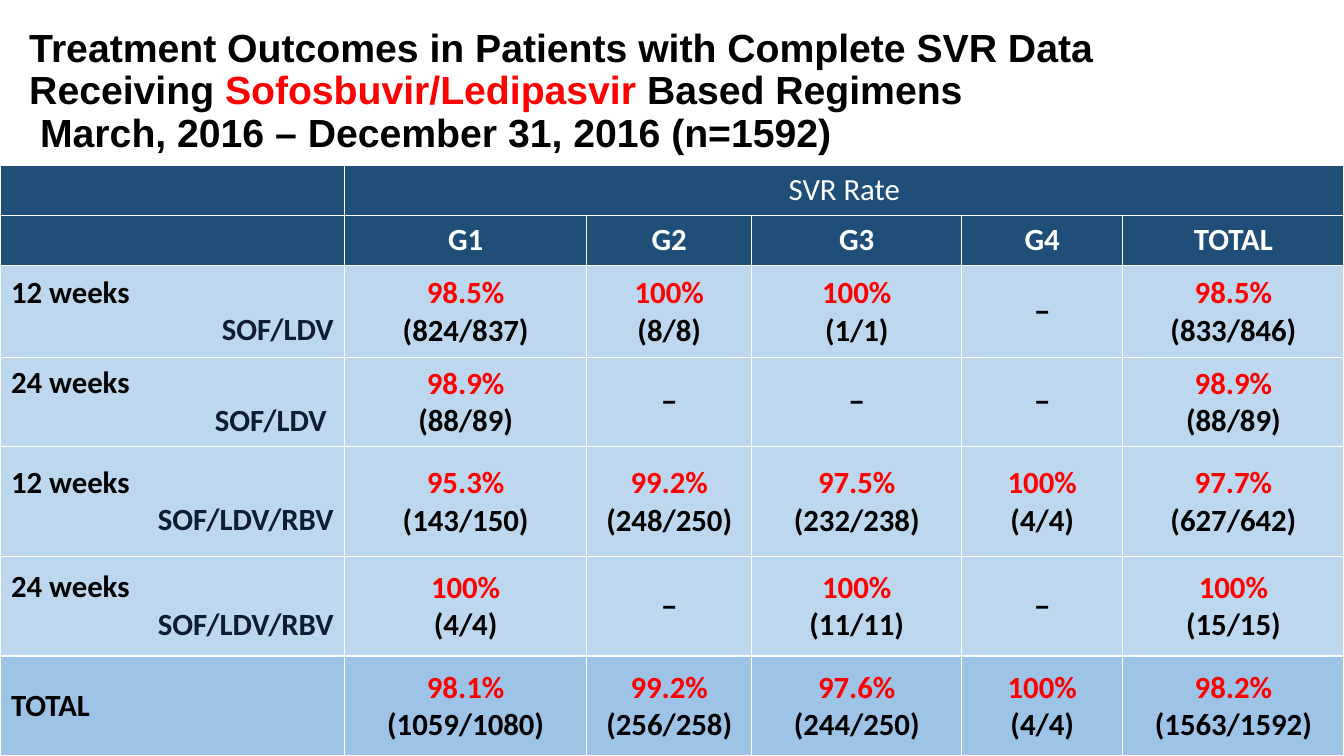
from dataclasses import dataclass

import lxml.etree
import pptx
import pptx.dml.color
import pptx.enum.text
import pptx.oxml.ns
import pptx.util

Pt = pptx.util.Pt
ALIGN = pptx.enum.text.PP_ALIGN
MIDDLE = pptx.enum.text.MSO_ANCHOR.MIDDLE


@dataclass(frozen=True)
class Theme:
    title_font: str = "Arial"
    table_font: str = "Calibri"
    title_size: float = 28
    table_size: float = 22
    border_width: float = 1
    black: str = "000000"
    white: str = "FFFFFF"
    accent: str = "FF0000"
    regimen: str = "101C32"
    header_fill: str = "1F4E79"
    body_fill: str = "BDD7EE"
    total_fill: str = "9DC3E6"


@dataclass(frozen=True)
class Line:
    """One paragraph of a table cell."""
    text: str
    color: str
    align: ALIGN = ALIGN.CENTER
    bold: bool = True


@dataclass(frozen=True)
class Outcome:
    """One treatment row: rates for G1 to G4 and the total."""
    duration: str
    regimen: str
    rates: tuple[str, ...]
    height: float
    fill: str


THEME = Theme()
LABEL_MARGINS = (7.9, 2.9, 7.9, 2.9)  # left, top, right, bottom
RATE_MARGINS = (0.7, 0.7, 0.7, 0)
COLUMN_WIDTHS = (246.2, 172.8, 118.1, 149.8, 115.2, 157.9)
HEADER_HEIGHT = 35.7
TABLE_TOP = 118.1
NO_DATA = "−"
GENOTYPES = ("G1", "G2", "G3", "G4", "TOTAL")

OUTCOMES = (
    Outcome("12 weeks", "SOF/LDV",
            ("98.5% (824/837)", "100% (8/8)", "100% (1/1)", NO_DATA, "98.5% (833/846)"),
            65.8, THEME.body_fill),
    Outcome("24 weeks", "SOF/LDV ",
            ("98.9% (88/89)", NO_DATA, NO_DATA, NO_DATA, "98.9% (88/89)"),
            63.6, THEME.body_fill),
    Outcome("12 weeks", "SOF/LDV/RBV",
            ("95.3% (143/150)", "99.2% (248/250)", "97.5% (232/238)", "100% (4/4)",
             "97.7% (627/642)"),
            78.5, THEME.body_fill),
    Outcome("24 weeks", "SOF/LDV/RBV",
            ("100% (4/4)", NO_DATA, "100% (11/11)", NO_DATA, "100% (15/15)"),
            71.3, THEME.body_fill),
    Outcome("TOTAL", "",
            ("98.1% (1059/1080)", "99.2% (256/258)", "97.6% (244/250)", "100% (4/4)",
             "98.2% (1563/1592)"),
            71.3, THEME.total_fill),
)


def rgb(color: str) -> pptx.dml.color.RGBColor:
    return pptx.dml.color.RGBColor.from_string(color)


def add_run(paragraph, text: str, font: str, size: float, color: str, bold: bool) -> None:
    run = paragraph.add_run()
    run.text = text
    run.font.name = font
    run.font.size = Pt(size)
    run.font.bold = bold
    run.font.color.rgb = rgb(color)


def add_borders(cell) -> None:
    qn = pptx.oxml.ns.qn
    properties = cell._tc.get_or_add_tcPr()
    for side in ("a:lnL", "a:lnR", "a:lnT", "a:lnB"):
        border = lxml.etree.SubElement(properties, qn(side), w=str(Pt(THEME.border_width)))
        fill = lxml.etree.SubElement(border, qn("a:solidFill"))
        lxml.etree.SubElement(fill, qn("a:srgbClr"), val=THEME.white)


def fill_cell(cell, lines: list[Line], fill: str,
              margins: tuple[float, ...] = LABEL_MARGINS) -> None:
    add_borders(cell)
    cell.fill.solid()
    cell.fill.fore_color.rgb = rgb(fill)
    cell.vertical_anchor = MIDDLE
    (cell.margin_left, cell.margin_top,
     cell.margin_right, cell.margin_bottom) = map(Pt, margins)
    frame = cell.text_frame
    for index, line in enumerate(lines):
        paragraph = frame.add_paragraph() if index else frame.paragraphs[0]
        paragraph.alignment = line.align
        add_run(paragraph, line.text, THEME.table_font, THEME.table_size,
                line.color, line.bold)


def label_lines(outcome: Outcome) -> list[Line]:
    lines = [Line(outcome.duration, THEME.black, ALIGN.LEFT)]
    if outcome.regimen:
        lines.append(Line(outcome.regimen, THEME.regimen, ALIGN.RIGHT))
    return lines


def rate_lines(rate: str) -> list[Line]:
    if rate == NO_DATA:
        return [Line(rate, THEME.black)]
    percent, patients = rate.split()
    return [Line(percent, THEME.accent), Line(patients, THEME.black)]


def add_title(slide) -> None:
    title = slide.shapes.title
    title.left, title.top, title.width, title.height = map(Pt, (13.7, 13.7, 828, 104.4))
    frame = title.text_frame
    frame.word_wrap = True
    frame.auto_size = pptx.enum.text.MSO_AUTO_SIZE.NONE
    frame.vertical_anchor = MIDDLE
    heading = frame.paragraphs[0]
    heading.alignment = ALIGN.LEFT
    heading.line_spacing = 0.9

    def add_part(text: str, color: str) -> None:
        add_run(heading, text, THEME.title_font, THEME.title_size, color, True)

    add_part("Treatment Outcomes in Patients with Complete SVR Data Receiving ", THEME.black)
    add_part("Sofosbuvir/Ledipasvir", THEME.accent)
    add_part(" Based Regimens", THEME.black)
    heading.add_line_break()
    add_part(" March, 2016 – December 31, 2016 (n=1592)", THEME.black)


def add_outcome_table(slide) -> None:
    heights = [HEADER_HEIGHT] * 2 + [outcome.height for outcome in OUTCOMES]
    table = slide.shapes.add_table(
        len(heights), len(COLUMN_WIDTHS), Pt(0), Pt(TABLE_TOP),
        Pt(sum(COLUMN_WIDTHS)), Pt(sum(heights))).table
    table.first_row = table.horz_banding = False
    for column, width in zip(table.columns, COLUMN_WIDTHS):
        column.width = Pt(width)
    for row, height in zip(table.rows, heights):
        row.height = Pt(height)

    # Header rows
    svr_header = [Line("SVR Rate", THEME.white, bold=False)]
    for column in range(len(COLUMN_WIDTHS)):
        fill_cell(table.cell(0, column), svr_header if column == 1 else [], THEME.header_fill)
    table.cell(0, 1).merge(table.cell(0, len(GENOTYPES)))
    fill_cell(table.cell(1, 0), [], THEME.header_fill)
    for column, genotype in enumerate(GENOTYPES, start=1):
        fill_cell(table.cell(1, column), [Line(genotype, THEME.white)], THEME.header_fill)

    # Treatment rows
    for row, outcome in enumerate(OUTCOMES, start=2):
        fill_cell(table.cell(row, 0), label_lines(outcome), outcome.fill)
        for column, rate in enumerate(outcome.rates, start=1):
            fill_cell(table.cell(row, column), rate_lines(rate), outcome.fill, RATE_MARGINS)


def main() -> None:
    presentation = pptx.Presentation()
    presentation.slide_width, presentation.slide_height = Pt(960), Pt(540)
    title_only = presentation.slide_layouts[5]
    slide = presentation.slides.add_slide(title_only)
    add_title(slide)
    add_outcome_table(slide)
    presentation.save("out.pptx")


if __name__ == "__main__":
    main()
